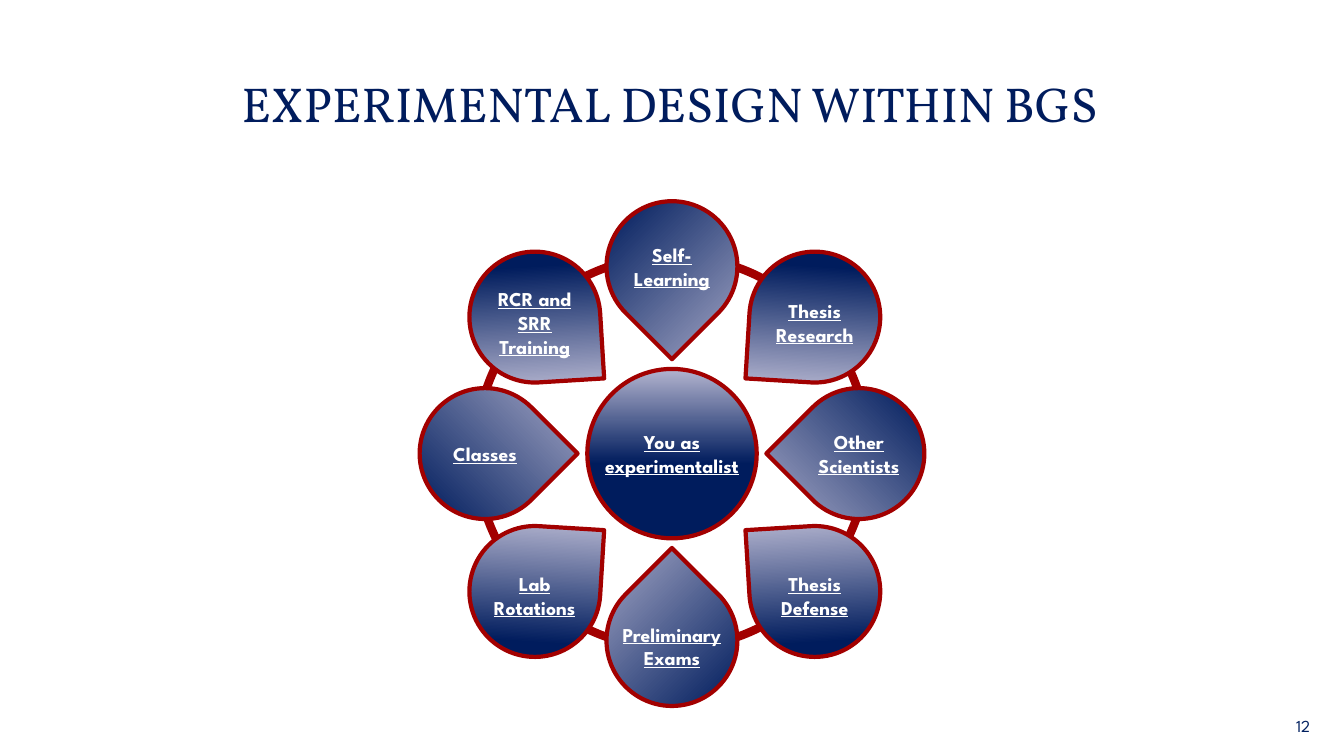
from dataclasses import dataclass

from pptx import Presentation
from pptx.dml.color import RGBColor as RGB
from pptx.enum.shapes import MSO_SHAPE as SHAPE
from pptx.enum.text import MSO_ANCHOR as ANCHOR, PP_ALIGN as ALIGN
from pptx.util import Pt


@dataclass(frozen=True)
class Theme:
    navy: str = "001C5D"
    mist: str = "B3B4CF"
    red: str = "A20000"
    white: str = "FFFFFF"
    page: str = "002060"
    serif: str = "Vollkorn"
    sans: str = "League Spartan"
    head: int = 35
    body: int = 14
    foot: int = 12


LOOK = Theme()
TITLE = dict(name=LOOK.serif, size=Pt(LOOK.head))
LABEL = dict(name=LOOK.sans, size=Pt(LOOK.body), bold=True, underline=True)
FOOT = dict(name=LOOK.sans, size=Pt(LOOK.foot))

# Petal: lines, centre offset (x, y), label drop, rotation, flips
PETALS = [
    (["Preliminary", "Exams"], 0, 133.5, 4, 45, "H"),
    (["Self-", "Learning"], 0, -133.5, 0, 45, "V"),
    (["RCR and SRR", "Training"], -98, -97.5, 4, 86.5, ""),
    (["Thesis Research"], 102, -97.5, 4, 273.5, "H"),
    (["Thesis", "Defense"], 102, 98.5, 3, 86.5, "HV"),
    (["Lab", "Rotations"], -98, 98.5, 3, 273.5, "V"),
    (["Other", "Scientists"], 133.5, 0, 0, 315, "H"),
    (["Classes"], -133.5, 0, 0, 315, "V"),
]


def put_text(slide, box, lines, style, color, align=ALIGN.CENTER, wrap=True):
    area = slide.shapes.add_textbox(*map(Pt, box))
    frame = area.text_frame
    frame.word_wrap = wrap
    frame.vertical_anchor = ANCHOR.MIDDLE
    frame.text = "\n".join(lines)
    for para in frame.paragraphs:
        para.alignment = align
        font = para.runs[0].font
        for key, value in style.items():
            setattr(font, key, value)
        font.color.rgb = RGB.from_string(color)


def put_shape(slide, kind, mid, size, line, dark=None, angle=0):
    """Outlined shape about its centre; dark is where the fade begins."""
    x, y = mid
    shape = slide.shapes.add_shape(
        kind, Pt(x - size / 2), Pt(y - size / 2), Pt(size), Pt(size))
    shape.shadow.inherit = False
    shape.line.color.rgb = RGB.from_string(LOOK.red)
    shape.line.width = Pt(line)
    if dark is None:
        shape.fill.background()
        return shape
    shape.fill.gradient()
    shape.fill.gradient_angle = angle
    fade = [(dark, LOOK.navy), (1, LOOK.mist)]
    for stop, (place, color) in zip(shape.fill.gradient_stops, fade):
        stop.position = place
        stop.color.rgb = RGB.from_string(color)
    return shape


def add_title(slide, box):
    put_text(slide, box, ["EXPERIMENTAL DESIGN WITHIN BGS"], TITLE, LOOK.navy)


def add_wheel(slide, box):
    left, top, width, height = box
    x, y = left + width / 2, top + height / 2

    # Ring behind the petals
    put_shape(slide, SHAPE.OVAL, (x, y - 1), 280, 6)

    # Petals, each with its tip towards the hub
    for lines, dx, dy, drop, turn, flips in PETALS:
        mid = (x + dx, y + dy)
        petal = put_shape(slide, SHAPE.TEAR, mid, 93.5, 3, 0.15)
        petal.rotation = turn
        for axis in flips:
            petal.element.spPr.xfrm.set("flip" + axis, "1")

    # Hub
    put_shape(slide, SHAPE.OVAL, (x, y), 121, 3, 0.44, 90)
    put_text(slide, (x - 60, y - 20.5, 120, 41),
             ["You as experimentalist"], LABEL, LOOK.white)

    # Petal labels
    for lines, dx, dy, drop, turn, flips in PETALS:
        spot = (x + dx - 47, y + dy + drop - 20.5, 94, 41)
        put_text(slide, spot, lines, LABEL, LOOK.white,
                 wrap=len(lines) == 1)


def add_page(slide, box):
    put_text(slide, box, ["12"], FOOT, LOOK.page, ALIGN.RIGHT)


def main():
    deck = Presentation()
    deck.slide_width, deck.slide_height = Pt(960), Pt(540)
    slide = deck.slides.add_slide(deck.slide_layouts[6])
    add_title(slide, (44.5, 32.5, 868, 82))
    add_wheel(slide, (300, 144, 360, 360))
    add_page(slide, (775, 504, 168, 29))
    deck.save("out.pptx")


if __name__ == "__main__":
    main()
